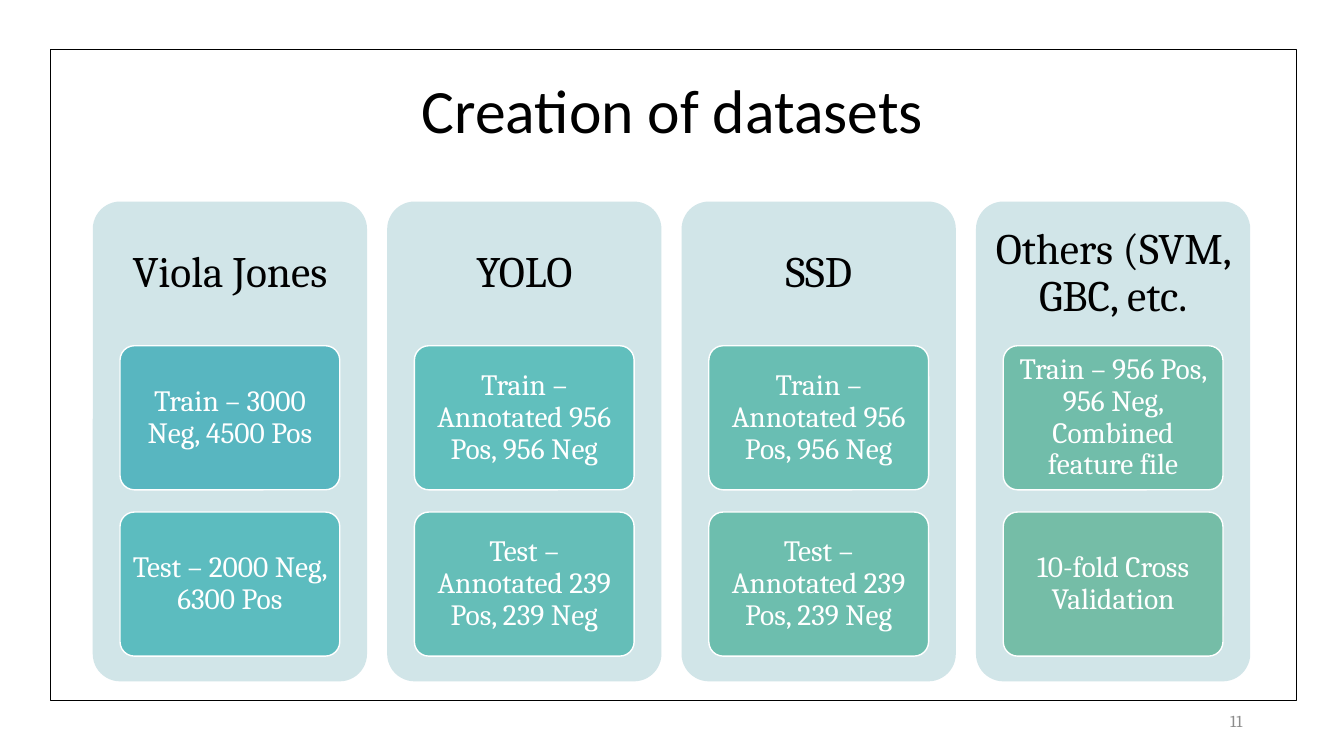
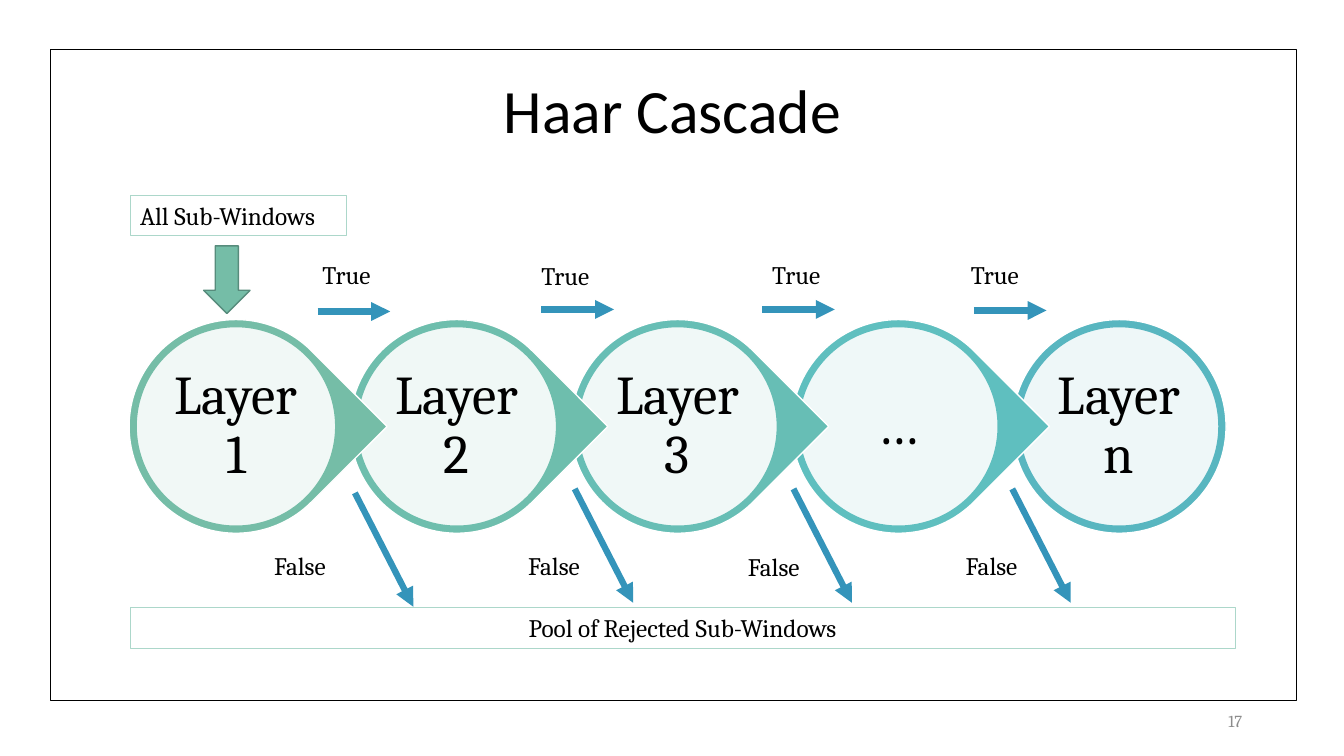
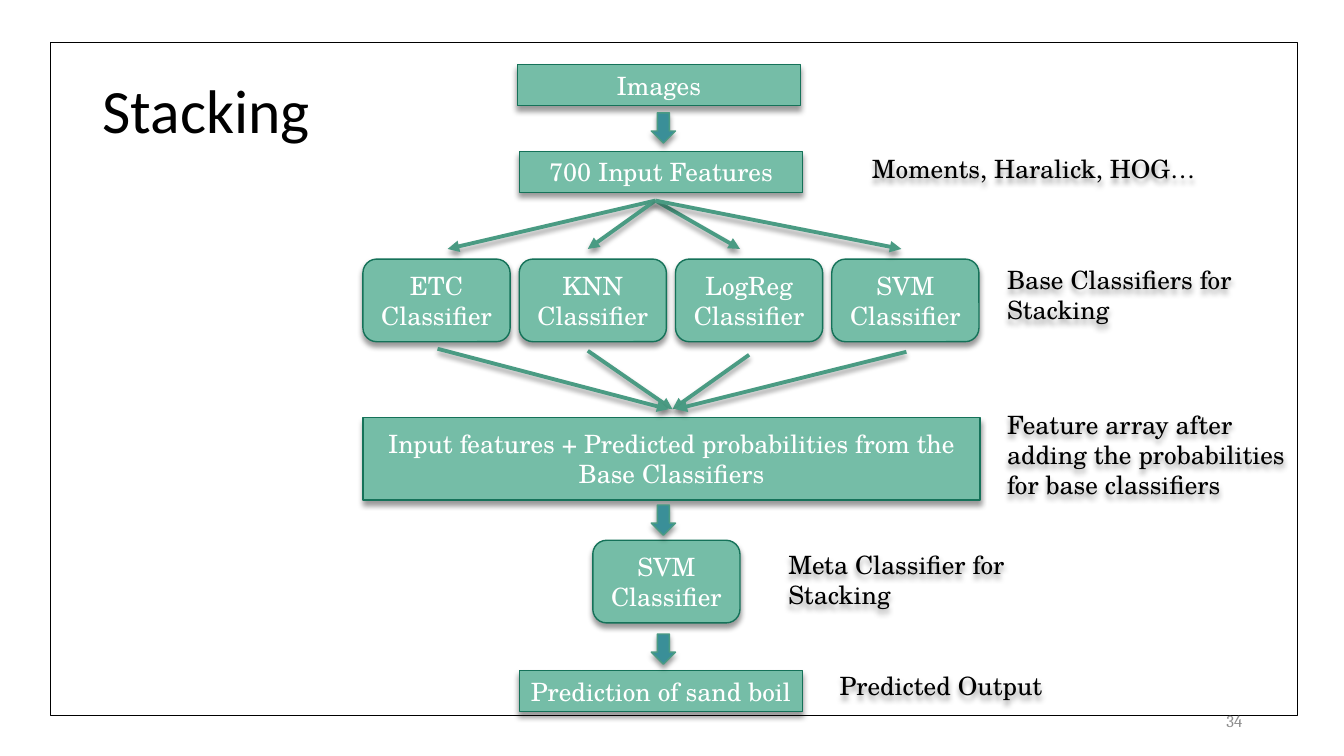
from lxml.etree import SubElement
from pptx import Presentation
from pptx.dml.color import RGBColor
from pptx.enum.shapes import MSO_CONNECTOR, MSO_SHAPE as Shape
from pptx.enum.text import MSO_ANCHOR as Anchor, PP_ALIGN as Align
from pptx.oxml.ns import qn
from pptx.util import Inches, Pt

COLORS = {
    "black": "000000", "white": "FFFFFF", "number": "8C8C8C",
    "panel": "D1E5E8", "green": "75BDA7", "green_edge": "578C7C",
    "pale_edge": "ACD7CA", "blue": "3494BA",
    "dark_edge": "157259", "link": "4A9B83", "teal": "3A8F98",
}
TITLE_FONT, BODY_FONT, STACK_FONT = "Calibri", "Cambria", "TeX Gyre Schola"


def rgb(color):
    """Accept a name from COLORS or a hex string."""
    return RGBColor.from_string(COLORS.get(color, color))


def write_text(shape, text, size=18, font=BODY_FONT, color="black", align=Align.LEFT,
               anchor=Anchor.TOP, spacing=1.0, insets=(0.1, 0.05)):
    """Fill a shape with text, one paragraph per line."""
    frame = shape.text_frame
    frame.word_wrap = True
    frame.vertical_anchor = anchor
    frame.margin_left = frame.margin_right = Inches(insets[0])
    frame.margin_top = frame.margin_bottom = Inches(insets[1])
    for index, line in enumerate(text.split("\n")):
        paragraph = frame.paragraphs[0] if index == 0 else frame.add_paragraph()
        paragraph.alignment = align
        paragraph.line_spacing = spacing
        run = paragraph.add_run()
        run.text = line
        run.font.size = Pt(size)
        run.font.name = font
        run.font.color.rgb = rgb(color)


def set_shadow(shape, visible):
    """Give a shape or connector a soft drop shadow, or none at all."""
    effects = SubElement(shape._element.spPr, qn("a:effectLst"))
    if visible:
        shadow = SubElement(effects, qn("a:outerShdw"), blurRad=str(Pt(4)), dist=str(Pt(3)),
                            dir="5400000", algn="ctr", rotWithShape="0")
        color = SubElement(shadow, qn("a:srgbClr"), val=COLORS["black"])
        SubElement(color, qn("a:alpha"), val="40000")


class Deck:
    def __init__(self):
        self.presentation = Presentation()
        self.presentation.slide_width = Inches(13.33)
        self.presentation.slide_height = Inches(7.5)
        self.slide = None

    def new_slide(self, title, number, align=Align.CENTER, frame=(0.5, 0.49, 12.36, 6.46)):
        """Start a slide with its frame, title and number."""
        self.slide = self.presentation.slides.add_slide(self.presentation.slide_layouts[6])
        self.shape(Shape.RECTANGLE, frame, line="black", weight=0.75)
        self.text((0.92, 0.4, 11.5, 1.45), title, size=44, font=TITLE_FONT, align=align,
                  anchor=Anchor.MIDDLE, spacing=0.9)
        self.text((9.42, 6.95, 3, 0.4), str(number), size=12, color="number",
                  align=Align.RIGHT, anchor=Anchor.MIDDLE)

    def shape(self, kind, box, fill=None, line=None, weight=1, opacity=None, shadow=False,
              corner=None, rotation=0, text=None, **text_format):
        shape = self.slide.shapes.add_shape(kind, *map(Inches, box))
        shape.rotation = rotation
        if corner is not None:
            shape.adjustments[0] = corner
        if fill:
            shape.fill.solid()
            shape.fill.fore_color.rgb = rgb(fill)
        else:
            shape.fill.background()
        if opacity is not None:
            color = shape._element.spPr.find(qn("a:solidFill"))[0]
            SubElement(color, qn("a:alpha"), val=str(opacity * 1000))
        if line:
            shape.line.color.rgb = rgb(line)
            shape.line.width = Pt(weight)
        else:
            shape.line.fill.background()
        set_shadow(shape, shadow)
        if text:
            write_text(shape, text, **text_format)

    def text(self, box, text, shadow=False, **text_format):
        shape = self.slide.shapes.add_textbox(*map(Inches, box))
        if shadow:
            set_shadow(shape, True)
        write_text(shape, text, **text_format)

    def arrow(self, start, end, color, weight, shadow=False):
        connector = self.slide.shapes.add_connector(
            MSO_CONNECTOR.STRAIGHT, *map(Inches, start + end))
        connector.line.color.rgb = rgb(color)
        connector.line.width = Pt(weight)
        SubElement(connector.line._get_or_add_ln(), qn("a:tailEnd"), type="triangle")
        set_shadow(connector, shadow)


def add_datasets(deck):
    deck.new_slide("Creation of datasets", 11)
    centered = dict(align=Align.CENTER, anchor=Anchor.MIDDLE, spacing=0.9)
    columns = [
        ("Viola Jones", ("Train – 3000 Neg, 4500 Pos", "58B6C0"),
         ("Test – 2000 Neg, 6300 Pos", "5CBCBF")),
        ("YOLO", ("Train – Annotated 956 Pos, 956 Neg", "61BFBD"),
         ("Test – Annotated 239 Pos, 239 Neg", "65BEB8")),
        ("SSD", ("Train – Annotated 956 Pos, 956 Neg", "69BEB3"),
         ("Test – Annotated 239 Pos, 239 Neg", "6DBEAE")),
        ("Others (SVM, GBC, etc.", ("Train – 956 Pos, 956 Neg, Combined feature file", "71BDAA"),
         ("10-fold Cross Validation", "75BDA7")),
    ]
    width, gap = 2.72, 0.2
    for column, (heading, *cards) in enumerate(columns):
        left = 0.92 + column * (width + gap)
        deck.shape(Shape.ROUNDED_RECTANGLE, (left, 2, width, 4.76), fill="panel", corner=0.1)
        deck.text((left, 2, width, 1.43), heading, size=31, insets=(0.13, 0.13), **centered)
        for row, (text, fill) in enumerate(cards):
            deck.shape(Shape.ROUNDED_RECTANGLE, (left + 0.27, 3.43 + row * 1.65, 2.18, 1.43),
                       fill=fill, line="white", corner=0.1, text=text, size=21,
                       color="white", insets=(0.06, 0.04), **centered)


def add_cascade(deck):
    deck.new_slide("Haar Cascade", 17)

    # Layers, the last one at the back
    layers = [("Layer 1", "75BDA7"), ("Layer 2", "6EBEAD"), ("Layer 3", "67BEB5"),
              ("…", "5FBFBF"), ("Layer n", "58B6C0")]
    last = len(layers) - 1
    for index, (name, color) in reversed(list(enumerate(layers))):
        left = 1.28 + index * 2.19
        kind, rotation = (Shape.OVAL, 0) if index == last else (Shape.TEAR, 45)
        deck.shape(kind, (left, 3.17, 2.12, 2.12), fill=color, line="white", rotation=rotation)
        deck.shape(Shape.OVAL, (left + 0.07, 3.24, 1.98, 1.98), fill="white", opacity=90,
                   line=color, text=name, size=39, align=Align.CENTER, anchor=Anchor.MIDDLE,
                   spacing=0.9, insets=(0.05, 0.05))

    # Input and rejected pool
    outlined = dict(line="pale_edge", weight=0.75)
    deck.shape(Shape.RECTANGLE, (1.29, 1.94, 2.15, 0.4), text="All Sub-Windows", **outlined)
    deck.shape(Shape.DOWN_ARROW, (2.02, 2.44, 0.46, 0.67), fill="green", line="green_edge")
    deck.shape(Shape.RECTANGLE, (1.29, 6.03, 10.96, 0.4), text="Pool of Rejected Sub-Windows",
               align=Align.CENTER, **outlined)

    # Outcomes: label position, then arrow start
    for label_left, label_top, x, y in [(3.1, 2.52, 3.15, 3.09), (5.27, 2.53, 5.37, 3.07),
                                        (7.56, 2.52, 7.56, 3.07), (9.53, 2.52, 9.66, 3.08)]:
        deck.arrow((x, y), (x + 0.72, y), "blue", 4.5)
        deck.text((label_left, label_top, 1.01, 0.4), "True")
    for label_left, label_top, x, y in [(2.62, 5.41, 3.52, 4.89), (5.14, 5.41, 5.7, 4.85),
                                        (7.32, 5.42, 7.87, 4.85), (9.48, 5.41, 10.04, 4.85)]:
        deck.arrow((x, y), (x + 0.58, y + 1.13), "blue", 4.5)
        deck.text((label_left, label_top, 0.96, 0.4), "False")


def add_stacking(deck):
    deck.new_slide("Stacking", 34, align=Align.LEFT, frame=(0.5, 0.42, 12.37, 6.68))
    block = dict(fill="green", line="dark_edge", shadow=True, font=STACK_FONT, color="white",
                 align=Align.CENTER, anchor=Anchor.MIDDLE)

    # Steps from images to prediction
    for box, text in [((5.13, 0.64, 2.81, 0.41), "Images"),
                      ((5.15, 1.5, 2.81, 0.41), "700 Input Features"),
                      ((3.6, 4.14, 6.12, 0.82), "Input features + Predicted probabilities "
                                                "from the Base Classifiers"),
                      ((5.15, 6.65, 2.81, 0.41), "Prediction of sand boil")]:
        deck.shape(Shape.RECTANGLE, box, text=text, **block)

    # Base classifiers in a row, meta classifier below
    base = [(3.6 + index * 1.55, 2.57, name)
            for index, name in enumerate(["ETC", "KNN", "LogReg", "SVM"])]
    for left, top, name in base + [(5.88, 5.36, "SVM")]:
        deck.shape(Shape.ROUNDED_RECTANGLE, (left, top, 1.46, 0.82),
                   text=f"{name}\nClassifier", **block)

    # Arrows
    for top in (1.12, 5.01, 6.29):
        deck.shape(Shape.DOWN_ARROW, (6.46, top, 0.24, 0.3), fill="teal", line="link",
                   shadow=True)
    for x in (4.44, 5.83, 7.34, 8.94):
        deck.arrow((6.5, 1.99), (x, 2.47), "link", 2.75, shadow=True)
    for start, end_x in [((7.43, 3.52), 6.67), ((5.83, 3.48), 6.67),
                         ((4.34, 3.46), 6.63), ((8.99, 3.49), 6.7)]:
        deck.arrow(start, (end_x, 4.06), "link", 2.75, shadow=True)

    # Side notes
    for box, text in [((8.55, 1.47, 3.74, 0.4), "Moments, Haralick, HOG…"),
                      ((9.89, 2.57, 3.2, 0.71), "Base Classifiers for Stacking"),
                      ((9.89, 4.01, 3.2, 1.01), "Feature array after adding the probabilities "
                                                "for base classifiers"),
                      ((7.72, 5.4, 3.2, 0.71), "Meta Classifier for Stacking"),
                      ((8.23, 6.6, 3.2, 0.4), "Predicted Output")]:
        deck.text(box, text, shadow=True, font=STACK_FONT)


def main():
    deck = Deck()
    add_datasets(deck)
    add_cascade(deck)
    add_stacking(deck)
    deck.presentation.save("out.pptx")


if __name__ == "__main__":
    main()
